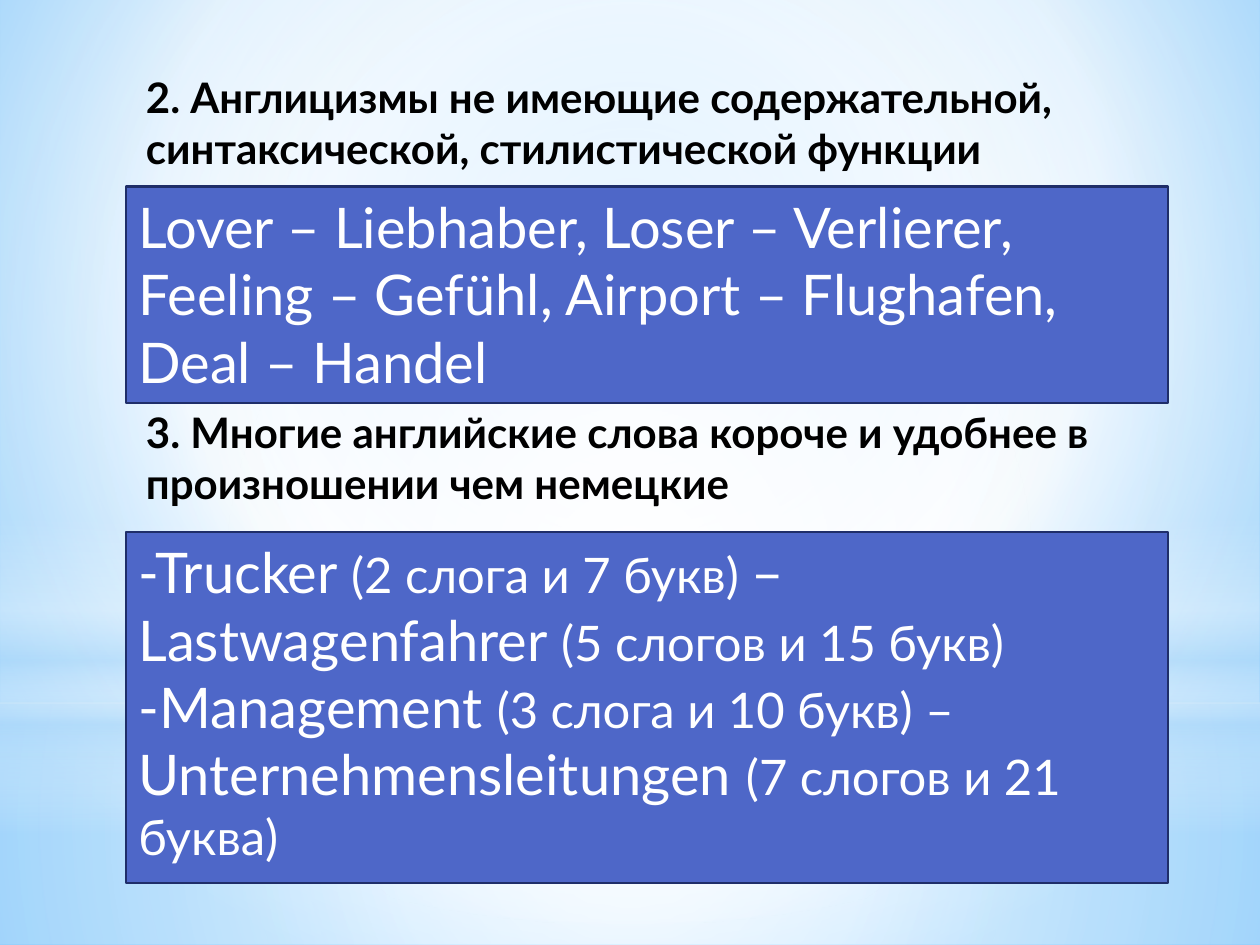
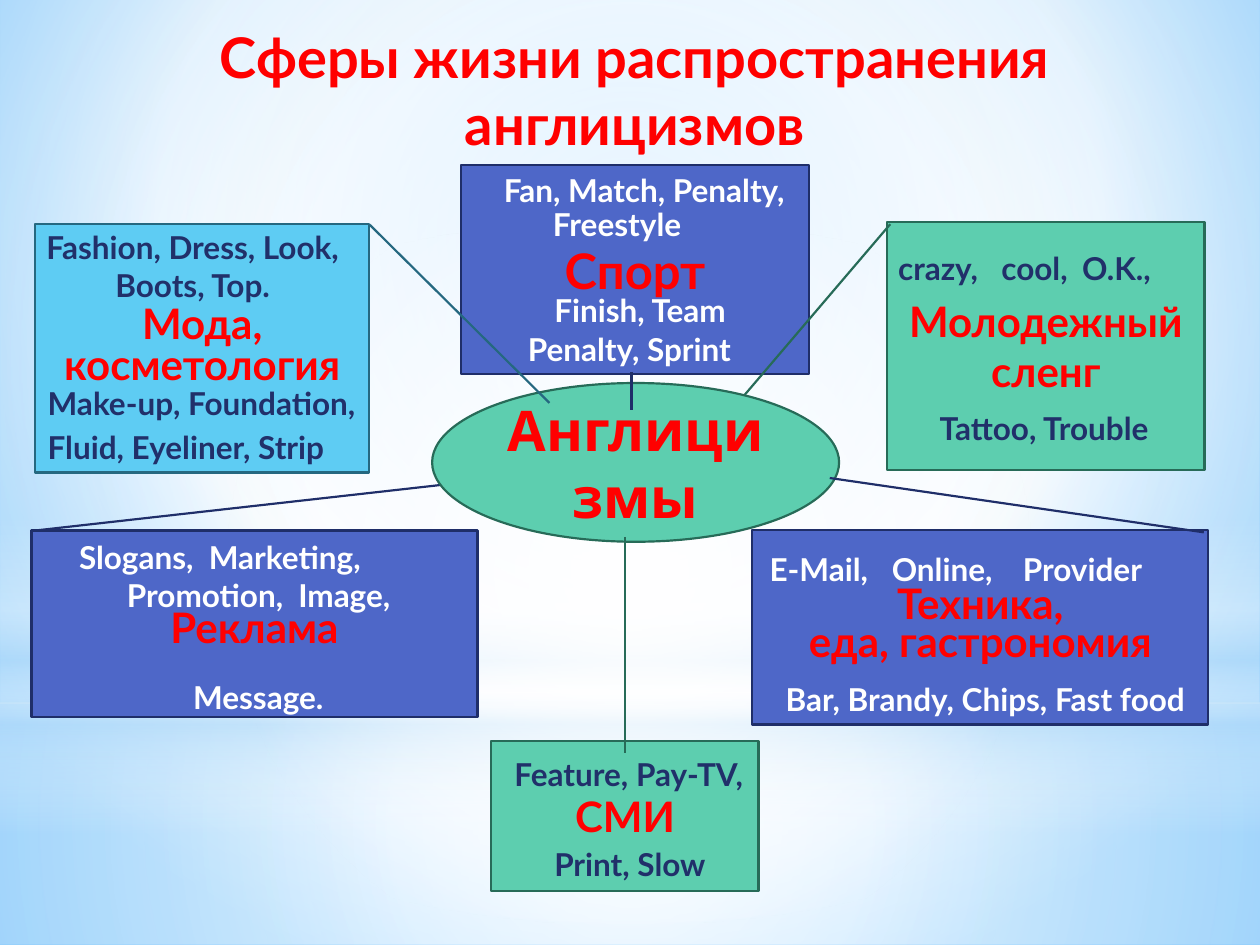
"""Build two slides on anglicisms in German: reasons for use and spheres of life."""
from lxml import etree
from pptx import Presentation
from pptx import util as u
from pptx.dml.color import RGBColor
from pptx.enum import shapes, text
from pptx.oxml.ns import qn

COLOURS = {
    "blue": "4E67C8", "blue line": "1F2E69",
    "green": "5DCEAF", "green line": "276B58",
    "sky": "5ECCF3", "sky line": "256880",
    "red": "FF0000", "navy": "21306A", "white": "FFFFFF", "black": "000000",
    "haze": "B4DCFA", "pale": "9ED5FF", "deep": "5BB9FF",
}
FORMATS = {
    "title": {"name": "Lato", "size": u.Pt(32), "bold": True},
    "hub": {"name": "Karla", "size": u.Pt(32), "bold": True},
    "sport": {"name": "Lato", "size": u.Pt(28), "bold": True},
    "heading": {"name": "Lato", "size": u.Pt(24), "bold": True},
    "label": {"name": "Lato", "size": u.Pt(18), "bold": True},
    "word": {"name": "Lato", "size": u.Pt(32), "bold": False},
    "note": {"name": "Lato", "size": u.Pt(28), "bold": False},
}
LEFT, CENTER = text.PP_ALIGN.LEFT, text.PP_ALIGN.CENTER
TOP, MIDDLE = text.MSO_ANCHOR.TOP, text.MSO_ANCHOR.MIDDLE
RECTANGLE, OVAL = shapes.MSO_SHAPE.RECTANGLE, shapes.MSO_SHAPE.OVAL
CALLOUT = shapes.MSO_SHAPE.LINE_CALLOUT_1


def paint_gradient(fill, element, stops, focus):
    """Fill with colour stops, radial around a focus box or linear downwards."""
    fill.gradient()
    gradient = element.find(".//" + qn("a:gradFill"))
    gradient.clear()
    stop_list = etree.SubElement(gradient, qn("a:gsLst"))
    for position, colour, opacity in stops:
        stop = etree.SubElement(stop_list, qn("a:gs"), pos=str(position * 1000))
        tint = etree.SubElement(stop, qn("a:srgbClr"), val=COLOURS[colour])
        if opacity < 100:
            etree.SubElement(tint, qn("a:alpha"), val=str(opacity * 1000))
    if focus:
        radial = etree.SubElement(gradient, qn("a:path"), path="circle")
        sides = {side: str(value * 1000) for side, value in zip("ltrb", focus)}
        etree.SubElement(radial, qn("a:fillToRect"), **sides)
    else:
        etree.SubElement(gradient, qn("a:lin"), ang="5400000", scaled="0")


def add_block(slide, kind, box, fill, colour, paragraphs, align=LEFT, anchor=TOP,
              spacing=None, tabs=()):
    """Add a text box, or a filled shape if a kind is given; runs are (style, text)."""
    box = [u.Inches(value) for value in box]
    if kind is None:
        shape = slide.shapes.add_textbox(*box)
    else:
        shape = slide.shapes.add_shape(kind, *box)
        shape.shadow.inherit = False
        shape.fill.solid()
        shape.fill.fore_color.rgb = RGBColor.from_string(COLOURS[fill])
        shape.line.color.rgb = RGBColor.from_string(COLOURS[fill + " line"])
        shape.line.width = u.Pt(1.25)
    frame = shape.text_frame
    frame.word_wrap = True
    frame.vertical_anchor = anchor
    for index, runs in enumerate(paragraphs):
        paragraph = frame.add_paragraph() if index else frame.paragraphs[0]
        paragraph.alignment = align
        if spacing:
            paragraph.line_spacing = u.Pt(spacing)
        if tabs:
            tab_list = etree.SubElement(paragraph._p.get_or_add_pPr(), qn("a:tabLst"))
            for tab in tabs:
                etree.SubElement(tab_list, qn("a:tab"), pos=str(u.Inches(tab)), algn="l")
        for style, words in runs:
            run = paragraph.add_run()
            run.text = words
            for name, value in FORMATS[style].items():
                setattr(run.font, name, value)
            run.font.color.rgb = RGBColor.from_string(COLOURS[colour])
    return shape


presentation = Presentation()
presentation.slide_width = u.Inches(10)
presentation.slide_height = u.Inches(7.5)
master = presentation.slide_master
reasons = presentation.slides.add_slide(presentation.slide_layouts[6])
spheres = presentation.slides.add_slide(presentation.slide_layouts[5])

paint_gradient(master.background.fill, master.element,
               [(0, "pale", 100), (60, "white", 100), (100, "deep", 100)], (20, 10, 20, 60))
centre = (50, 50, 50, 50)
glows = [
    (RECTANGLE, (0, 5.58, 10, 1.92), centre,
     [(0, "white", 91), (37, "white", 76), (100, "haze", 79)]),
    (RECTANGLE, (0, 0, 10, 5.58), centre,
     [(0, "white", 89), (48, "white", 62), (100, "haze", 79)]),
    (RECTANGLE, (0, 4.12, 10, 2.5), None,
     [(0, "white", 0), (29, "white", 30), (45, "haze", 40),
      (55, "white", 26), (65, "haze", 60), (100, "white", 0)]),
    (OVAL, (0, 1.75, 10, 5.58), centre, [(0, "white", 100), (56, "white", 0)]),
]
for depth, (kind, box, focus, stops) in enumerate(glows):
    glow = reasons.shapes.add_shape(kind, *[u.Inches(value) for value in box])
    glow.shadow.inherit = False
    glow.line.fill.background()
    paint_gradient(glow.fill, glow.element, stops, focus)
    master.shapes.element.insert(2 + depth, glow.element)

headings = [
    (0.52, "2. Англицизмы не имеющие содержательной, синтаксической, стилистической функции"),
    (3.18, "3. Многие английские слова короче и удобнее в произношении чем немецкие"),
]
for top, words in headings:
    add_block(reasons, None, (1.06, top, 8.35, 0.91), None, "black", [[("heading", words)]])

examples = [
    (1.48, 1.72, [[("word", "Lover – Liebhaber, Loser – Verlierer, Feeling – Gefühl, "
                            "Airport – Flughafen, Deal – Handel")]]),
    (4.22, 2.79, [
        [("word", "-Trucker "), ("note", "(2 слога и 7 букв) "),
         ("word", "– Lastwagenfahrer "), ("note", "(5 слогов и 15 букв)")],
        [("word", "-Management "), ("note", "(3 слога и 10 букв) – "),
         ("word", "Unternehmensleitungen "), ("note", "(7 слогов и 21 буква)")],
    ]),
]
for top, height, paragraphs in examples:
    add_block(reasons, RECTANGLE, (1, top, 8.27, height), "blue", "white", paragraphs)

title = spheres.shapes.title
title.left, title.top, title.width, title.height = [
    u.Inches(value) for value in (0.51, 0.13, 9.06, 1.18)]
title.text_frame.text = "Сферы жизни распространения англицизмов"
title.text_frame.vertical_anchor = TOP
title.text_frame.auto_size = text.MSO_AUTO_SIZE.NONE
title_paragraph = title.text_frame.paragraphs[0]
title_paragraph.alignment = CENTER
for name, value in FORMATS["title"].items():
    setattr(title_paragraph.runs[0].font, name, value)
title_paragraph.runs[0].font.color.rgb = RGBColor.from_string(COLOURS["red"])

topics = [
    (CALLOUT, (0.25, 4.21, 3.54, 1.48), "blue", "heading", ["Реклама"], 32,
     (0, 0.01, -0.25, 0.94)),
    (OVAL, (3.43, 3.04, 3.23, 1.26), "green", "hub", ["Англицизмы"], None, ()),
    (CALLOUT, (3.66, 1.31, 2.76, 1.66), "blue", "sport", ["Спорт"], None,
     (0.99, 0.49, 1.17, 0.49)),
    (CALLOUT, (7.04, 1.76, 2.52, 1.97), "green", "heading", ["Молодежный сленг"], None,
     (0.01, 0.01, 0.7, -0.45)),
    (CALLOUT, (5.97, 4.21, 3.62, 1.54), "blue", "heading",
     ["Техника,", "еда, гастрономия"], 22, (-0.27, 0.17, 0.01, 0.99)),
    (CALLOUT, (0.28, 1.78, 2.65, 1.97), "sky", "heading", ["Мода, косметология"], 23,
     (0, 1, 0.72, 1.54)),
    (CALLOUT, (3.9, 5.88, 2.12, 1.19), "green", "heading", ["СМИ"], None,
     (-1.36, 0.5, 0.08, 0.5)),
]
for kind, box, fill, style, lines, spacing, pointer in topics:
    topic = add_block(spheres, kind, box, fill, "red", [[(style, line)] for line in lines],
                      CENTER, MIDDLE, spacing)
    for index, value in enumerate(pointer):
        topic.adjustments[index] = value

labels = [
    (0.53, 4.22, 3.2, "white", LEFT, "Slogans,\tMarketing,", (1.03,)),
    (0.91, 4.52, 2.8, "white", LEFT, "Promotion,\tImage,", (1.36,)),
    (0.28, 5.33, 3.54, "white", CENTER, "Message.", ()),
    (6.01, 4.32, 3.46, "white", LEFT, "E-Mail,\tOnline,\tProvider", (0.97, 2.01)),
    (5.85, 5.35, 3.94, "white", CENTER, "Bar, Brandy, Chips, Fast food", ()),
    (7.03, 1.93, 2.5, "navy", LEFT, "crazy,\tcool,\tO.K.,", (0.82, 1.46)),
    (7.36, 3.2, 2.06, "navy", LEFT, "Tattoo, Trouble", ()),
    (3.9, 1.31, 2.77, "white", LEFT, "Fan, Match, Penalty,", ()),
    (4.29, 1.58, 1.5, "white", LEFT, "Freestyle", ()),
    (3.94, 2.26, 2.28, "white", CENTER, "Finish, Team", ()),
    (3.9, 2.57, 2.19, "white", CENTER, "Penalty, Sprint", ()),
    (3.89, 5.94, 2.2, "navy", CENTER, "Feature, Pay-TV,", ()),
    (3.9, 6.66, 2.2, "navy", CENTER, "Print, Slow", ()),
    (0.23, 1.76, 2.6, "navy", CENTER, "Fashion, Dress, Look, Boots, Top.", ()),
    (0.28, 3, 2.99, "navy", LEFT, "Make-up, Foundation,", ()),
    (0.28, 3.35, 2.65, "navy", LEFT, "Fluid, Eyeliner, Strip", ()),
]
for left, top, width, colour, align, words, tabs in labels:
    add_block(spheres, None, (left, top, width, 0.4), None, colour, [[("label", words)]],
              align, tabs=tabs)

presentation.save("out.pptx")
